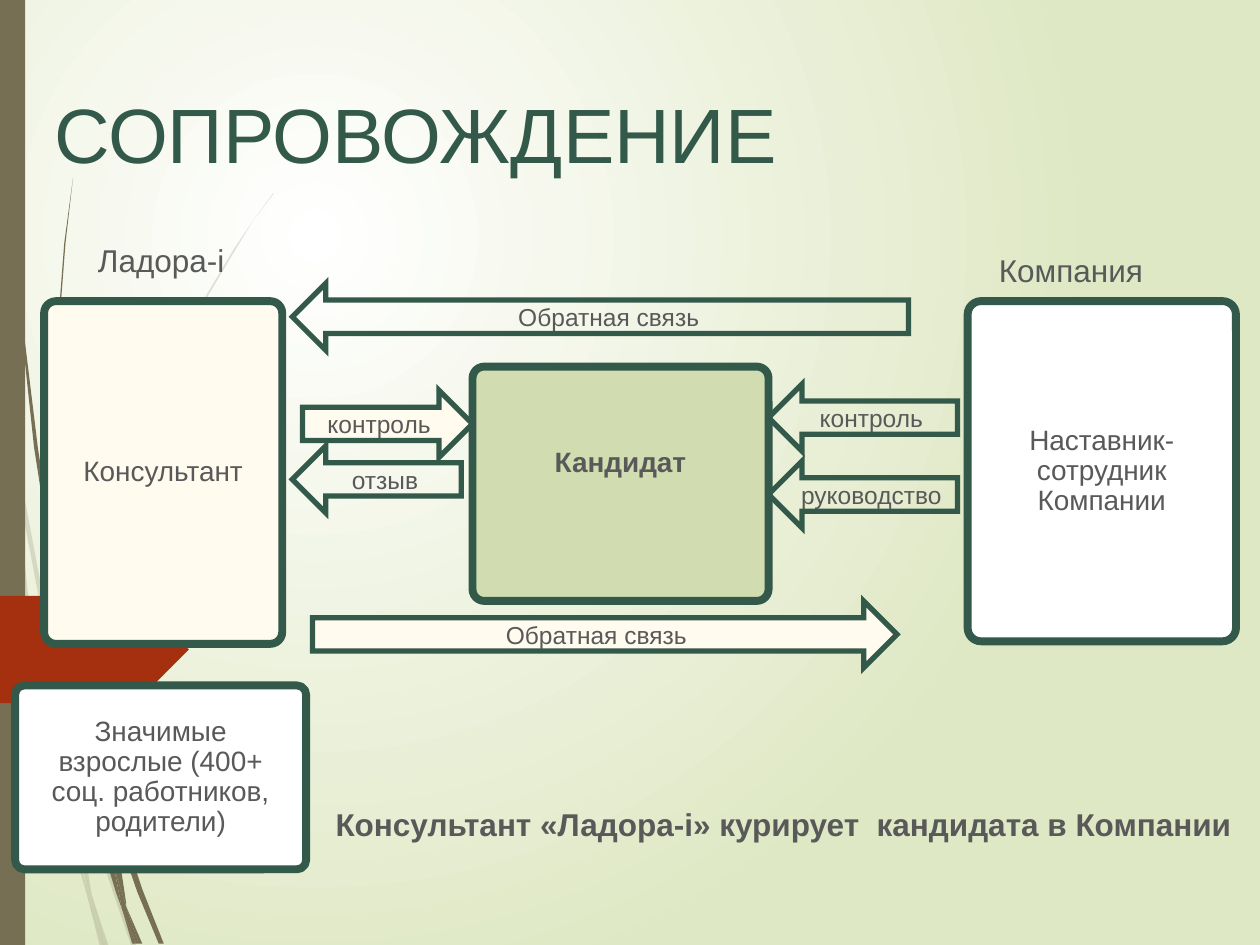
"""Build the candidate support scheme slide."""
from dataclasses import dataclass

from lxml import etree
from pptx import Presentation
from pptx.dml.color import RGBColor
from pptx.enum.shapes import MSO_SHAPE
from pptx.enum.text import MSO_ANCHOR, PP_ALIGN
from pptx.oxml.ns import qn
from pptx.util import Inches, Pt

RECT, ROUND, PENTAGON = MSO_SHAPE.RECTANGLE, MSO_SHAPE.ROUNDED_RECTANGLE, MSO_SHAPE.PENTAGON
LEFT_ARROW, RIGHT_ARROW = MSO_SHAPE.LEFT_ARROW, MSO_SHAPE.RIGHT_ARROW
CENTER, LEFT, MIDDLE, TOP = PP_ALIGN.CENTER, PP_ALIGN.LEFT, MSO_ANCHOR.MIDDLE, MSO_ANCHOR.TOP
FONT = "Arial"
GREEN, GRAY, BROWN, RED = "325949", "595959", "766F54", "A53010"
WHITE, CREAM, SAGE, PALE = "FFFFFF", "FFFBEE", "D1DDB0", "DFE8C4"
ARROW_HEIGHT = 0.53


@dataclass
class Box:
    text: str
    left: float
    top: float
    width: float
    height: float
    fill: str
    bold: bool = False
    bottom_inset: float = 0.2


@dataclass
class Arrow:
    text: str
    kind: MSO_SHAPE
    left: float
    top: float
    width: float
    fill: str | None = None


@dataclass
class Label:
    text: str
    left: float
    top: float
    width: float
    height: float
    size: int = 18
    color: str = GRAY
    bold: bool = False
    align: PP_ALIGN = CENTER
    anchor: MSO_ANCHOR = MIDDLE
    left_inset: float = 0.1


BOXES = [
    Box("Кандидат", 3.75, 2.91, 2.35, 1.86, SAGE, True, 0.53),
    Box("Наставник-сотрудник Компании", 7.68, 2.39, 2.13, 2.7, WHITE),
    Box("Значимые взрослые (400+ соц. работников, родители)", 0.12, 5.44, 2.31, 1.46, WHITE),
    Box("Консультант", 0.35, 2.39, 1.89, 2.72, CREAM),
]
ARROWS = [
    Arrow("контроль", RIGHT_ARROW, 2.4, 3.1, 1.35, CREAM),
    Arrow("контроль", LEFT_ARROW, 6.1, 3.05, 1.5),
    Arrow("Обратная связь", RIGHT_ARROW, 2.48, 4.77, 4.64, CREAM),
    Arrow("отзыв", LEFT_ARROW, 2.32, 3.54, 1.34),
    Arrow("Обратная связь", LEFT_ARROW, 2.32, 2.25, 4.89),
    Arrow("руководство", LEFT_ARROW, 6.1, 3.66, 1.5),
]
LABELS = [
    Label("Компания", 7.5, 1.94, 2, 0.41),
    Label("Ладора-i", 0.28, 1.86, 2, 0.41),
    Label("Консультант «Ладора-i» курирует  кандидата в Компании", 2.48, 5.88, 7.48, 1.32, bold=True),
    Label("СОПРОВОЖДЕНИЕ", 0.43, 0.64, 9.57, 0.84, 44, GREEN, False, LEFT, TOP, 0),
]
FAINT_STEMS = [
    [(0.4, 5.22), (0.59, 5.99), (0.59, 5.86), (0.43, 5.2), (0.1, 3.45), (0.12, 3.76)],
    [(0.64, 6.07), (0.61, 5.96), (0.61, 6.1), (0.85, 6.94), (1.04, 7.5), (1.08, 7.5), (0.88, 6.92)],
    [(0.83, 7.5), (0.86, 7.5), (0.73, 7.11)],
    [(0.64, 6.83), (0.48, 6.19), (0.22, 4.69), (0.12, 3.76), (0.08, 3.5), (0.19, 4.7),
     (0.45, 6.21), (0.64, 6.93), (0.7, 7.14), (0.69, 7.07)],
    [(0.58, 5.99), (0.6, 6.46), (0.64, 6.83), (0.67, 6.92), (0.73, 7.11), (0.72, 7.06),
     (0.63, 6.46), (0.61, 6.1), (0.61, 6.08)],
    [(0.61, 5.84), (0.76, 4.62), (1.11, 3.49), (1.59, 2.45), (1.87, 1.98), (2.01, 1.75),
     (2.17, 1.54), (2.17, 1.53), (2.01, 1.75), (1.86, 1.97), (1.58, 2.44), (1.1, 3.48),
     (0.75, 4.61), (0.59, 5.84), (0.59, 5.86), (0.61, 5.96)],
    [(0.7, 7.14), (0.79, 7.5), (0.82, 7.5)],
    [(0.67, 6.92), (0.65, 6.83), (0.69, 7.07), (0.7, 7.14), (0.82, 7.5), (0.83, 7.5), (0.73, 7.11)],
]
STEMS = [
    [(0.05, 1.1), (0.14, 2.33), (0.27, 3.55), (0.46, 4.77), (0.47, 4.81), (0.45, 4.57),
     (0.45, 4.53), (0.3, 3.55), (0.15, 2.32), (0.06, 1.09), (0.04, 0.48), (0.03, 0),
     (0.02, 0), (0.03, 0.48)],
    [(0.73, 5.92), (0.88, 6.45), (0.88, 6.33), (0.88, 6.31), (0.77, 5.9), (0.5, 4.72), (0.53, 5.05)],
    [(0.94, 6.49), (0.91, 6.41), (0.91, 6.56), (1.09, 7.08), (1.26, 7.49), (1.3, 7.49), (1.13, 7.06)],
    [(0.91, 6.91), (0.81, 6.57), (0.6, 5.56), (0.53, 5.05), (0.47, 4.77), (0.56, 5.57),
     (0.77, 6.59), (0.92, 7.08), (0.97, 7.22), (0.96, 7.17)],
    [(0.5, 4.72), (0.48, 4.53), (0.44, 3.49), (0.48, 2.45), (0.52, 1.93), (0.58, 1.41),
     (0.51, 1.93), (0.47, 2.45), (0.43, 3.49), (0.45, 4.49), (0.49, 4.72)],
    [(1.1, 7.49), (1.13, 7.49), (1, 7.19)],
    [(0.91, 6.33), (1.03, 5.52), (1.31, 4.76), (1.69, 4.06), (1.91, 3.74), (2.03, 3.59),
     (2.16, 3.44), (2.15, 3.44), (2.03, 3.58), (1.91, 3.73), (1.68, 4.05), (1.29, 4.74),
     (1.01, 5.51), (0.88, 6.31), (0.91, 6.41)],
    [(0.97, 7.22), (1.05, 7.49), (1.08, 7.49)],
    [(0.88, 6.45), (0.91, 6.91), (0.96, 7.06), (1, 7.19), (1, 7.16), (0.91, 6.56), (0.9, 6.51)],
    [(0.96, 7.06), (0.91, 6.91), (0.96, 7.17), (0.97, 7.22), (1.08, 7.49), (1.1, 7.49), (1, 7.19)],
]


def rgb(color: str) -> RGBColor:
    return RGBColor.from_string(color)


def style(sp, fill: str | None, line: str | None = None, width: float = 0) -> None:
    sp.shadow.inherit = False
    if fill:
        sp.fill.solid()
        sp.fill.fore_color.rgb = rgb(fill)
    else:
        sp.fill.background()
    if line:
        sp.line.color.rgb = rgb(line)
        sp.line.width = Pt(width)
    else:
        sp.line.fill.background()


def add_shape(s, kind: MSO_SHAPE, left: float, top: float, width: float, height: float):
    return s.shapes.add_shape(kind, Inches(left), Inches(top), Inches(width), Inches(height))


def write(sp, text: str, size: int, color: str = GRAY, bold: bool = False,
          align: PP_ALIGN = CENTER, anchor: MSO_ANCHOR = MIDDLE,
          insets: tuple = (0.1, 0.05, 0.1, 0.05), spacing: float = 1.0) -> None:
    tf = sp.text_frame
    tf.word_wrap = True
    tf.vertical_anchor = anchor
    tf.margin_left, tf.margin_top, tf.margin_right, tf.margin_bottom = map(Inches, insets)
    p = tf.paragraphs[0]
    p.alignment = align
    p.line_spacing = spacing
    r = p.add_run()
    r.text = text
    r.font.name, r.font.size, r.font.bold = FONT, Pt(size), bold
    r.font.color.rgb = rgb(color)


def add_background(s) -> None:
    fill = s.background.fill
    fill.gradient()
    for stop, color in zip(fill.gradient_stops, (WHITE, PALE)):
        stop.color.rgb = rgb(color)
    lin = s._element.find(".//" + qn("a:lin"))
    radial = etree.Element(qn("a:path"), path="circle")
    etree.SubElement(radial, qn("a:fillToRect"), l="50000", t="50000", r="100000", b="100000")
    lin.getparent().replace(lin, radial)


def add_stem(s, points: list, alpha: int = 100) -> None:
    start, *rest = [(Inches(x), Inches(y)) for x, y in points]
    builder = s.shapes.build_freeform(*start)
    builder.add_line_segments(rest, close=True)
    sp = builder.convert_to_shape()
    style(sp, BROWN)
    if alpha < 100:
        color = sp._element.spPr.find(qn("a:solidFill")).find(qn("a:srgbClr"))
        etree.SubElement(color, qn("a:alpha"), val=str(alpha * 1000))


def add_box(s, box: Box) -> None:
    sp = add_shape(s, ROUND, box.left, box.top, box.width, box.height)
    sp.adjustments[0] = 0.05
    style(sp, box.fill, GREEN, 4.5)
    write(sp, box.text, 16, bold=box.bold, insets=(0.22, 0.2, 0.22, box.bottom_inset), spacing=0.9)


def add_arrow(s, arrow: Arrow) -> None:
    sp = add_shape(s, arrow.kind, arrow.left, arrow.top, arrow.width, ARROW_HEIGHT)
    style(sp, arrow.fill, GREEN, 3)
    etree.SubElement(sp._element.spPr.find(qn("a:ln")), qn("a:miter"), lim="800000")
    write(sp, arrow.text, 14, insets=(0.05, 0, 0.05, 0))


def add_label(s, label: Label) -> None:
    sp = s.shapes.add_textbox(*map(Inches, (label.left, label.top, label.width, label.height)))
    write(sp, label.text, label.size, label.color, label.bold, label.align, label.anchor,
          (label.left_inset, 0.05, 0.1, 0.05))


def main() -> None:
    prs = Presentation()
    prs.slide_width, prs.slide_height = Inches(10), Inches(7.5)
    s = prs.slides.add_slide(prs.slide_layouts[6])
    add_background(s)
    for points in FAINT_STEMS:
        add_stem(s, points, 20)
    for points in STEMS:
        add_stem(s, points)
    style(add_shape(s, RECT, 0, 0, 0.2, 7.5), BROWN)
    style(add_shape(s, PENTAGON, 0, 4.73, 1.5, 0.85), RED)
    for box in BOXES:
        add_box(s, box)
    for arrow in ARROWS:
        add_arrow(s, arrow)
    for label in LABELS:
        add_label(s, label)
    prs.save("out.pptx")


if __name__ == "__main__":
    main()
